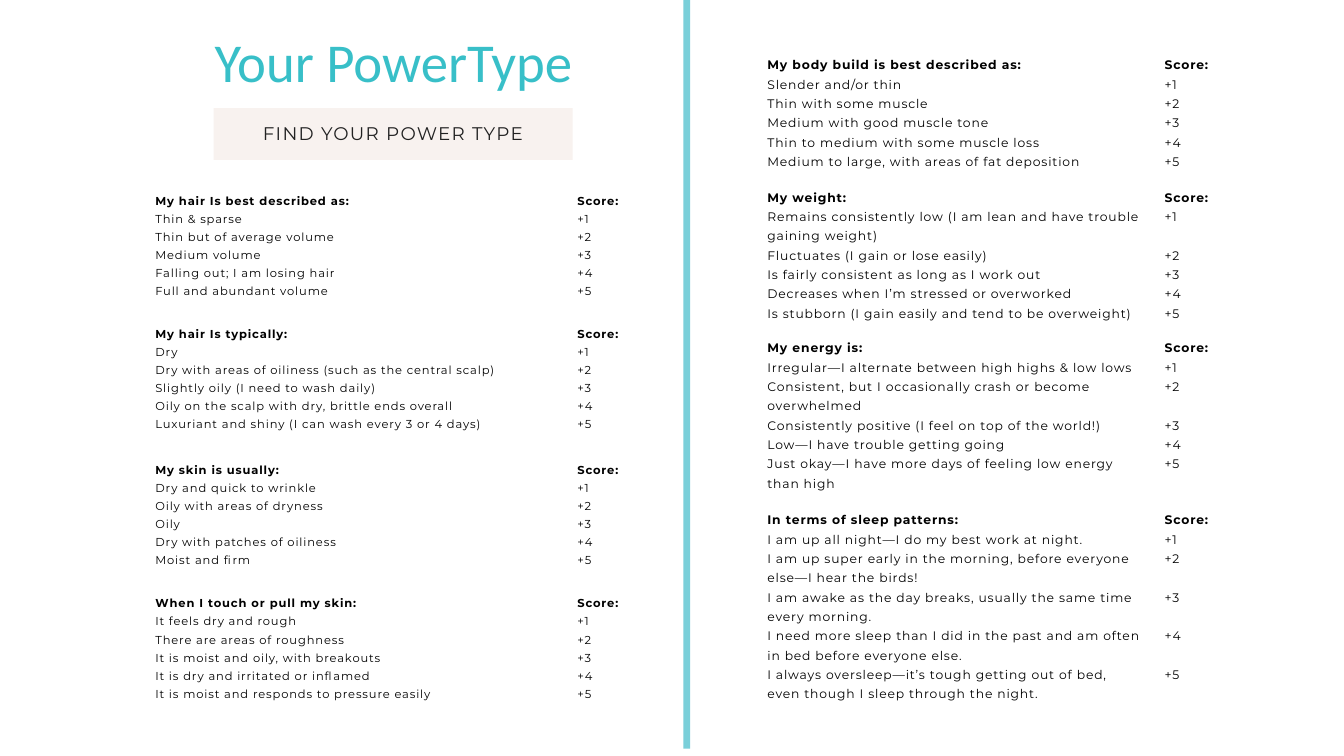
from dataclasses import dataclass

from pptx import Presentation
from pptx import util as u
from pptx.dml.color import RGBColor
from pptx.enum import shapes, text

COLORS = {
    "title": "38BFC8",
    "divider": "7ACFD9",
    "banner": "F8F2EF",
    "subtitle": "222222",
    "body": "000000",
}


@dataclass(frozen=True)
class Style:
    size: float
    line: float
    color: str = "body"
    font: str = "Montserrat"
    tracking: float = 0.9
    align: text.PP_ALIGN = text.PP_ALIGN.LEFT


@dataclass(frozen=True)
class Line:
    words: str
    bold: bool = False
    gap_after: float = 0


@dataclass(frozen=True)
class Question:
    top: float
    width: float
    heading: str
    options: tuple[str, ...]
    two_line: tuple[int, ...] = ()  # scores of the options that wrap


@dataclass(frozen=True)
class Column:
    left: float
    score_left: float
    score_width: float
    style: Style
    questions: tuple[Question, ...]


TITLE = Style(58.7, 79.8, "title", "Calibri", 0, text.PP_ALIGN.CENTER)
SUBTITLE = Style(19.6, 24.3, "subtitle", tracking=1.4, align=text.PP_ALIGN.CENTER)

COLUMNS = (
    Column(166.4, 618.6, 57.6, Style(12.3, 19.4), (
        Question(203, 395.3, "My hair Is best described as:", (
            "Thin & sparse",
            "Thin but of average volume",
            "Medium volume",
            "Falling out; I am losing hair",
            "Full and abundant volume",
        )),
        Question(345.8, 426.2, "My hair Is typically:", (
            "Dry",
            "Dry with areas of oiliness (such as the central scalp)",
            "Slightly oily (I need to wash daily)",
            "Oily on the scalp with dry, brittle ends overall",
            "Luxuriant and shiny (I can wash every 3 or 4 days)",
        )),
        Question(491.2, 426.2, "My skin is usually:", (
            "Dry and quick to wrinkle",
            "Oily with areas of dryness",
            "Oily",
            "Dry with patches of oiliness",
            "Moist and firm",
        )),
        Question(634.4, 426.2, "When I touch or pull my skin:", (
            "It feels dry and rough",
            "There are areas of roughness",
            "It is moist and oily, with breakouts",
            "It is dry and irritated or inflamed",
            "It is moist and responds to pressure easily",
        )),
    )),
    Column(822.2, 1247.8, 54.7, Style(13.2, 20.7), (
        Question(56.9, 373, "My body build is best described as:", (
            "Slender and/or thin",
            "Thin with some muscle",
            "Medium with good muscle tone",
            "Thin to medium with some muscle loss",
            "Medium to large, with areas of fat deposition",
        )),
        Question(198.7, 401.8, "My weight:", (
            "Remains consistently low (I am lean and have trouble gaining weight)",
            "Fluctuates (I gain or lose easily)",
            "Is fairly consistent as long as I work out",
            "Decreases when I’m stressed or overworked",
            "Is stubborn (I gain easily and tend to be overweight)",
        ), (1,)),
        Question(360, 401.8, "My energy is:", (
            "Irregular—I alternate between high highs & low lows",
            "Consistent, but I occasionally crash or become overwhelmed",
            "Consistently positive (I feel on top of the world!)",
            "Low—I have trouble getting going",
            "Just okay—I have more days of feeling low energy than high",
        ), (2, 5)),
        Question(544.3, 401.8, "In terms of sleep patterns:", (
            "I am up all night—I do my best work at night.",
            "I am up super early in the morning, before everyone else—I hear the birds!",
            "I am awake as the day breaks, usually the same time every morning.",
            "I need more sleep than I did in the past and am often in bed before everyone else.",
            "I always oversleep—it’s tough getting out of bed, even though I sleep through the night.",
        ), (2, 3, 4, 5)),
    )),
)


def add_block(slide, left: float, top: float, width: float, height: float,
              color: str) -> None:
    shape = slide.shapes.add_shape(shapes.MSO_SHAPE.RECTANGLE, u.Pt(left), u.Pt(top),
                                   u.Pt(width), u.Pt(height))
    shape.shadow.inherit = False
    shape.fill.solid()
    shape.fill.fore_color.rgb = RGBColor.from_string(COLORS[color])
    shape.line.fill.background()


def add_lines(slide, left: float, top: float, width: float, height: float,
              style: Style, lines: list[Line]) -> None:
    shape = slide.shapes.add_textbox(u.Pt(left), u.Pt(top), u.Pt(width), u.Pt(height))
    frame = shape.text_frame
    frame.margin_left = frame.margin_top = frame.margin_right = frame.margin_bottom = 0
    frame.word_wrap = True
    frame.auto_size = text.MSO_AUTO_SIZE.SHAPE_TO_FIT_TEXT
    for index, line in enumerate(lines):
        paragraph = frame.add_paragraph() if index else frame.paragraphs[0]
        paragraph.alignment = style.align
        paragraph.line_spacing = u.Pt(style.line)
        paragraph.space_after = u.Pt(line.gap_after)
        run = paragraph.add_run()
        run.text = line.words
        run.font.name = style.font
        run.font.size = u.Pt(style.size)
        run.font.bold = line.bold
        run.font.color.rgb = RGBColor.from_string(COLORS[style.color])
        run.font._element.set("spc", str(round(style.tracking * 100)))


def add_options(slide, column: Column, question: Question) -> None:
    lines = [Line(question.heading, True), *map(Line, question.options)]
    height = (len(lines) + len(question.two_line)) * column.style.line
    add_lines(slide, column.left, question.top, question.width, height,
              column.style, lines)


def add_scores(slide, column: Column, question: Question) -> None:
    """Line the scores up with the options, leaving a line below each that wraps."""
    last = len(question.options)
    gaps = [column.style.line if score in question.two_line and score < last else 0
            for score in range(1, last + 1)]
    lines = [Line("Score:", True)]
    lines += [Line(f"+{score}", gap_after=gap) for score, gap in enumerate(gaps, 1)]
    height = len(lines) * column.style.line + sum(gaps)
    add_lines(slide, column.score_left, question.top, column.score_width, height,
              column.style, lines)


def main() -> None:
    presentation = Presentation()
    presentation.slide_width, presentation.slide_height = u.Pt(1440), u.Pt(810)
    slide = presentation.slides.add_slide(presentation.slide_layouts[6])

    add_block(slide, 229, 115.9, 384.5, 55.4, "banner")
    add_lines(slide, 67.7, 130.3, 707, 24.3, SUBTITLE, [Line("FIND YOUR POWER TYPE")])
    add_lines(slide, 198.7, 20.9, 445.7, 77, TITLE, [Line("Your PowerType")])
    for column in COLUMNS:
        for add_part in (add_options, add_scores):
            for question in column.questions:
                add_part(slide, column, question)
    add_block(slide, 732.2, 0, 7.2, 802, "divider")

    presentation.save("out.pptx")


if __name__ == "__main__":
    main()
